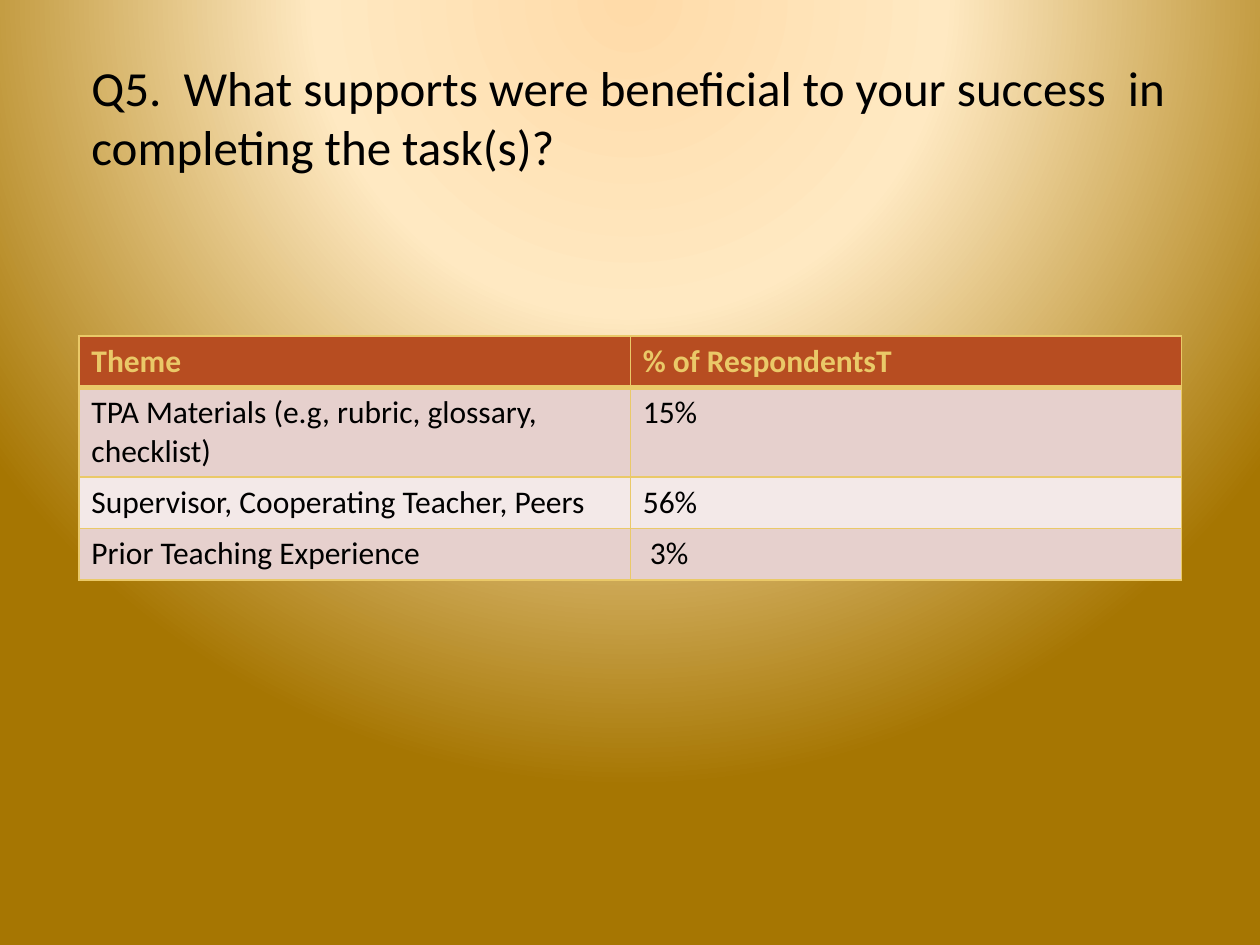
from dataclasses import dataclass

from lxml import etree
from pptx import Presentation
from pptx import util as u
from pptx.dml.color import RGBColor
from pptx.enum import text
from pptx.oxml import ns

FONT = "Calibri"
COLORS = {
    "text": "000000",
    "gold": "EAC968",
    "header": "B74D21",
    "band_dark": "E6D0CD",
    "band_light": "F3E9E8",
}
BACKGROUND_STOPS = {0: "FFDBA9", 40: "FFE9C2", 100: "A67602"}


@dataclass
class TableRow:
    theme: str
    share: str
    fill: str = "band_dark"
    color: str = "text"
    bold: bool = False
    height: float = 1.04
    top_border: float = 1
    bottom_border: float = 1


ROWS = [
    TableRow("Theme", "% of RespondentsT", fill="header", color="gold",
             bold=True, bottom_border=3),
    TableRow("TPA Materials (e.g, rubric, glossary, checklist)", "15%",
             height=1.8, top_border=3),
    TableRow("Supervisor, Cooperating Teacher, Peers", "56%", fill="band_light"),
    TableRow("Prior Teaching Experience", " 3%"),
]


def write_text(frame, content: str, *, size: float, color: str = "text",
               bold: bool = False) -> None:
    frame.word_wrap = True
    paragraph = frame.paragraphs[0]
    paragraph.alignment = text.PP_ALIGN.LEFT
    run = paragraph.add_run()
    run.text = content
    run.font.name = FONT
    run.font.size = u.Pt(size)
    run.font.bold = bold
    run.font.color.rgb = RGBColor.from_string(COLORS[color])


def add_color(parent, color: str) -> None:
    etree.SubElement(parent, ns.qn("a:srgbClr"), val=color)


def paint_background(slide) -> None:
    """Radial gradient whose centre lies above the slide."""
    slide.background.fill.gradient()
    gradient = slide.element.find(".//" + ns.qn("a:gradFill"))
    for child in list(gradient):
        gradient.remove(child)
    stops = etree.SubElement(gradient, ns.qn("a:gsLst"))
    for position, color in BACKGROUND_STOPS.items():
        stop = etree.SubElement(stops, ns.qn("a:gs"), pos=str(position * 1000))
        add_color(stop, color)
    circle = etree.SubElement(gradient, ns.qn("a:path"))
    circle.set("path", "circle")
    etree.SubElement(circle, ns.qn("a:fillToRect"),
                     l="50000", t="-80000", r="50000", b="180000")


def set_borders(cell, row: TableRow) -> None:
    properties = cell._tc.get_or_add_tcPr()
    widths = {"L": 1, "R": 1, "T": row.top_border, "B": row.bottom_border}
    for index, (side, width) in enumerate(widths.items()):
        line = etree.Element(ns.qn(f"a:ln{side}"), w=str(u.Pt(width)))
        add_color(etree.SubElement(line, ns.qn("a:solidFill")), COLORS["gold"])
        properties.insert(index, line)


def add_theme_table(slide, rows: list[TableRow]) -> None:
    height = sum(row.height for row in rows)
    table = slide.shapes.add_table(len(rows), 2, u.Cm(1.59), u.Cm(6.77),
                                   u.Cm(22.23), u.Cm(height)).table
    for index, row in enumerate(rows):
        table.rows[index].height = u.Cm(row.height)
        for column, content in enumerate((row.theme, row.share)):
            cell = table.cell(index, column)
            cell.fill.solid()
            cell.fill.fore_color.rgb = RGBColor.from_string(COLORS[row.fill])
            set_borders(cell, row)
            write_text(cell.text_frame, content, size=18, color=row.color,
                       bold=row.bold)


def main() -> None:
    presentation = Presentation()
    presentation.slide_width, presentation.slide_height = u.Cm(25.4), u.Cm(19.05)
    slide = presentation.slides.add_slide(presentation.slide_layouts[5])
    paint_background(slide)

    # Title
    title = slide.shapes.title
    title.left, title.top = u.Cm(1.59), u.Cm(0.76)
    title.width, title.height = u.Cm(22.23), u.Cm(3.18)
    title.text_frame.vertical_anchor = text.MSO_ANCHOR.MIDDLE
    write_text(title.text_frame,
               "Q5.  What supports were beneficial to your success  in "
               "completing the task(s)?", size=28)

    # Survey results
    add_theme_table(slide, ROWS)
    presentation.save("out.pptx")


if __name__ == "__main__":
    main()
